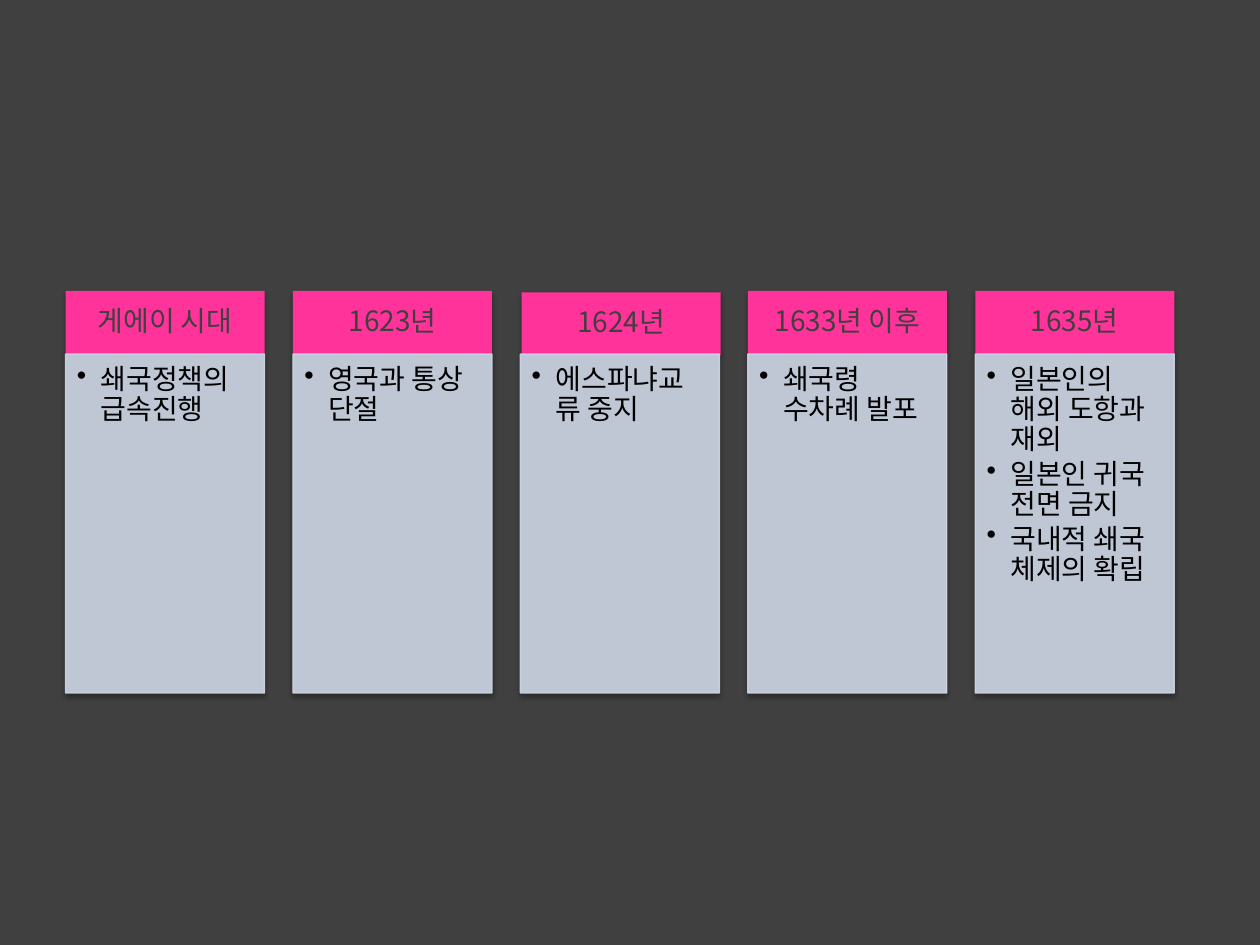
from lxml import etree
from pptx import Presentation
from pptx import util as u
from pptx.dml.color import RGBColor
from pptx.enum import shapes, text
from pptx.oxml.ns import qn

Inches, Pt = u.Inches, u.Pt
DARK = RGBColor(0x40, 0x40, 0x40)
PINK = RGBColor(0xFF, 0x33, 0x99)
PALE = RGBColor(0xD0, 0xD8, 0xE8)
BLACK = RGBColor(0, 0, 0)
FONT = "Noto Sans CJK KR"

PERIODS = [
    ("게에이 시대", ["쇄국정책의 급속진행"]),
    ("1623년", ["영국과 통상 단절"]),
    ("1624년", ["에스파냐교류 중지"]),
    ("1633년 이후", ["쇄국령 수차례 발포"]),
    ("1635년", ["일본인의 해외 도항과 재외", "일본인 귀국 전면 금지", "국내적 쇄국 체제의 확립"]),
]
LEFT, LAST_LEFT, TOP = 0.52, 7.74, 2.31
WIDTH, HEAD_HEIGHT, BODY_HEIGHT = 1.58, 0.5, 2.69
STEP = (LAST_LEFT - LEFT) / (len(PERIODS) - 1)

prs = Presentation()
prs.slide_width, prs.slide_height = Inches(10), Inches(7.5)
slide = prs.slides.add_slide(prs.slide_layouts[6])
slide.background.fill.solid()
slide.background.fill.fore_color.rgb = DARK


def add_panel(left, top, height, color, insets):
    panel = slide.shapes.add_shape(
        shapes.MSO_SHAPE.RECTANGLE, Inches(left), Inches(top), Inches(WIDTH), Inches(height))
    panel.fill.solid()
    panel.fill.fore_color.rgb = color
    panel.line.fill.background()
    panel.shadow.inherit = False
    effects = panel._element.spPr.find(qn("a:effectLst"))
    shadow = etree.SubElement(effects, qn("a:outerShdw"), blurRad=str(Pt(3.1)),
                              dist=str(Pt(1.8)), dir="5400000", rotWithShape="0")
    shade = etree.SubElement(shadow, qn("a:srgbClr"), val="000000")
    etree.SubElement(shade, qn("a:alpha"), val="35000")
    frame = panel.text_frame
    frame.word_wrap = True
    frame.margin_left, frame.margin_top, frame.margin_right, frame.margin_bottom = map(Inches, insets)
    return panel


def write(paragraph, words, color, align, gap):
    paragraph.text = words
    paragraph.alignment = align
    paragraph.line_spacing = 0.9
    paragraph.space_after = Pt(gap)
    paragraph.font.size = Pt(16)
    paragraph.font.color.rgb = color
    paragraph.font.name = FONT
    etree.SubElement(paragraph.font._element, qn("a:ea"), typeface=FONT)


for i, (period, events) in enumerate(PERIODS):
    left = LEFT + i * STEP
    nudge = 0.01 if period == "1624년" else 0
    header = add_panel(left + nudge, TOP + nudge, HEAD_HEIGHT, PINK, (0.12, 0.07, 0.12, 0.07))
    header.text_frame.vertical_anchor = text.MSO_ANCHOR.MIDDLE
    write(header.text_frame.paragraphs[0], period, DARK, text.PP_ALIGN.CENTER, 5.6)

    body = add_panel(left, TOP + HEAD_HEIGHT, BODY_HEIGHT, PALE, (0.09, 0.09, 0.12, 0.14))
    body.line.color.rgb = PALE
    body.line.width = Pt(0.75)
    for tint in body._element.spPr.findall(".//" + qn("a:solidFill") + "/" + qn("a:srgbClr")):
        etree.SubElement(tint, qn("a:alpha"), val="90000")
    body.text_frame.vertical_anchor = text.MSO_ANCHOR.TOP
    for n, event in enumerate(events):
        item = body.text_frame.add_paragraph() if n else body.text_frame.paragraphs[0]
        write(item, event, BLACK, text.PP_ALIGN.LEFT, 2.4)
        item.level = 1
        props = item._p.get_or_add_pPr()
        props.set("marL", str(Inches(0.19)))
        props.set("indent", str(Inches(-0.19)))
        bullet = etree.Element(qn("a:buChar"), char="•")
        props.find(qn("a:defRPr")).addprevious(bullet)

prs.save("out.pptx")
